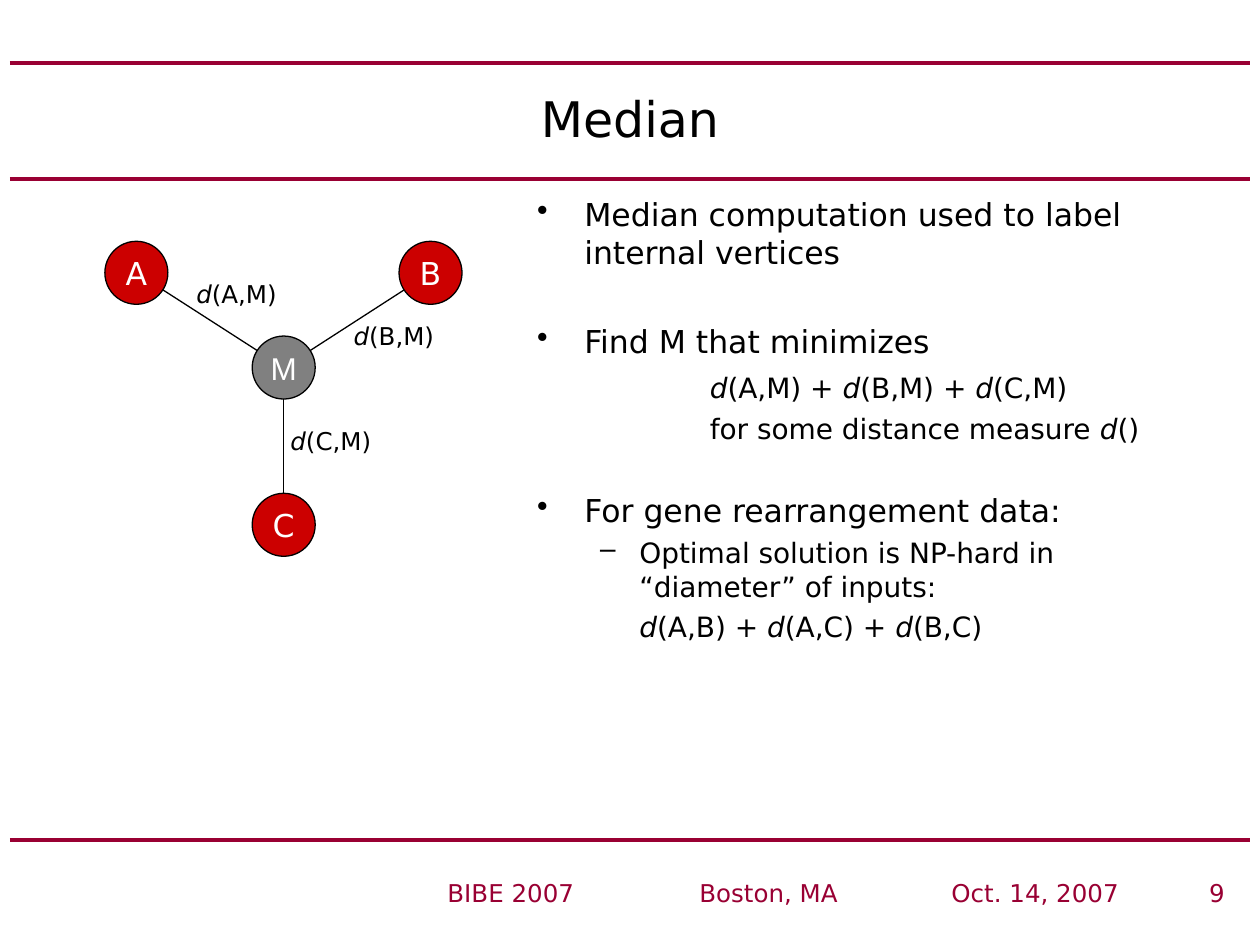
from dataclasses import dataclass
from typing import Any

from lxml.etree import SubElement
from pptx import Presentation
from pptx.dml.color import RGBColor
from pptx.enum.shapes import MSO_CONNECTOR as Connector, MSO_SHAPE as Shape
from pptx.enum.text import MSO_ANCHOR as Anchor, PP_ALIGN as Align
from pptx.oxml.ns import qn
from pptx.util import Cm, Pt

COLORS = {"rule": "990033", "text": "000000", "leaf": "CC0000",
          "median": "808080", "node_text": "FFFFFF"}
FONT = "DejaVu Sans"
NODE_SIZE = 1.27


@dataclass(frozen=True)
class Node:
    name: str
    x: float
    y: float
    fill: str = "leaf"
    font: str = FONT


@dataclass(frozen=True)
class Label:
    text: str
    x: float
    y: float


@dataclass(frozen=True)
class Item:
    text: str
    size: int = 18
    before: float = 4
    left: float = 0.95
    hanging: float = 0.95
    bullet: str = ""


MEDIAN = Node("M", 5.72, 7.41, "median", "Arial")
LEAVES = [Node("A", 2.75, 5.5), Node("B", 8.68, 5.5), Node("C", 5.72, 10.58)]
LABELS = [Label("*d*(A,M)", 2.97, 5.5), Label("*d*(B,M)", 6.14, 6.35),
          Label("*d*(C,M)", 4.87, 8.47)]
RULES = [1.27, 3.6, 16.93]
FOOTER_TABS = [(5.08, "l"), (10.16, "l"), (15.67, "r")]
ITEMS = [
    Item("Median computation used to label internal vertices", before=0, bullet="•"),
    Item("Find M that minimizes", before=29.5, bullet="•"),
    Item("*d*(A,M) + *d*(B,M) + *d*(C,M)", 16, 6, 3.48, 0),
    Item("for some distance measure *d*()", 16, 4.2, 3.48, 0),
    Item("For gene rearrangement data:", before=26, bullet="•"),
    Item("Optimal solution is NP-hard in “diameter” of inputs:", 16, 4, 2.06, 0.79, "–"),
    Item("*d*(A,B) + *d*(A,C) + *d*(B,C)", 16, 4, 2.06, 0),
]


def apply(target: Any, values: dict[str, Any]) -> None:
    for name, value in values.items():
        setattr(target, name, value)


def color(name: str) -> RGBColor:
    return RGBColor.from_string(COLORS[name])


def write(paragraph: Any, text: str, size: int, ink: str = "text", font: str = FONT) -> None:
    for index, part in enumerate(text.split("*")):
        if part:
            run = paragraph.add_run()
            run.text = part
            apply(run.font, {"name": font, "size": Pt(size), "italic": index % 2 == 1})
            run.font.color.rgb = color(ink)


def add_box(slide: Any, x: float, y: float, width: float, height: float) -> Any:
    frame = slide.shapes.add_textbox(Cm(x), Cm(y), Cm(width), Cm(height)).text_frame
    frame.word_wrap = True
    return frame


def add_line(slide: Any, start: tuple[float, float], end: tuple[float, float],
             ink: str, width: float) -> None:
    line = slide.shapes.add_connector(
        Connector.STRAIGHT, *(Cm(value) for value in (*start, *end)))
    line.line.color.rgb = color(ink)
    line.line.width = Pt(width)
    SubElement(line._element.spPr, qn("a:effectLst"))


def add_node(slide: Any, node: Node) -> None:
    shape = slide.shapes.add_shape(
        Shape.OVAL, Cm(node.x - NODE_SIZE / 2), Cm(node.y - NODE_SIZE / 2),
        Cm(NODE_SIZE), Cm(NODE_SIZE))
    shape.shadow.inherit = False
    shape.fill.solid()
    shape.fill.fore_color.rgb = color(node.fill)
    shape.line.color.rgb = color("text")
    shape.line.width = Pt(0.75)
    frame = shape.text_frame
    apply(frame, {"margin_left": 0, "margin_right": 0, "margin_top": 0, "margin_bottom": 0,
                  "vertical_anchor": Anchor.MIDDLE, "word_wrap": False})
    frame.paragraphs[0].alignment = Align.CENTER
    write(frame.paragraphs[0], node.name, 18, "node_text", node.font)


def add_label(slide: Any, label: Label) -> None:
    paragraph = add_box(slide, label.x, label.y, 3.6, 0.85).paragraphs[0]
    paragraph.alignment = Align.CENTER
    write(paragraph, label.text, 14)


def add_title(slide: Any, text: str) -> None:
    frame = add_box(slide, 1.27, 1.27, 22.86, 2.2)
    frame.vertical_anchor = Anchor.MIDDLE
    frame.paragraphs[0].alignment = Align.CENTER
    write(frame.paragraphs[0], text, 28)


def add_items(slide: Any, items: list[Item]) -> None:
    frame = add_box(slide, 10.58, 3.81, 13.55, 12.91)
    for index, item in enumerate(items):
        paragraph = frame.add_paragraph() if index else frame.paragraphs[0]
        properties = paragraph._p.get_or_add_pPr()
        properties.set("marL", str(Cm(item.left)))
        properties.set("indent", str(-Cm(item.hanging)))
        if item.bullet:
            SubElement(properties, qn("a:buChar"), char=item.bullet)
        else:
            SubElement(properties, qn("a:buNone"))
        paragraph.space_before = Pt(item.before)
        write(paragraph, item.text, item.size)


def add_footer(slide: Any, parts: list[str]) -> None:
    frame = add_box(slide, 7.2, 17.57, 17.78, 0.85)
    frame.margin_left = Cm(1.82)
    paragraph = frame.paragraphs[0]
    tabs = SubElement(paragraph._p.get_or_add_pPr(), qn("a:tabLst"))
    for position, alignment in FOOTER_TABS:
        SubElement(tabs, qn("a:tab"), pos=str(Cm(position)), algn=alignment)
    write(paragraph, "\t".join(parts), 14, "rule")


def main() -> None:
    presentation = Presentation()
    apply(presentation, {"slide_width": Cm(25.4), "slide_height": Cm(19.05)})
    slide = presentation.slides.add_slide(presentation.slide_layouts[6])
    for y in RULES:
        add_line(slide, (0.2, y), (25.2, y), "rule", 2.25)
    add_footer(slide, ["BIBE 2007", "Boston, MA", "Oct. 14, 2007", "9"])
    add_title(slide, "Median")
    for leaf in LEAVES:
        add_line(slide, (leaf.x, leaf.y), (MEDIAN.x, MEDIAN.y), "text", 0.75)
    for node in [*LEAVES, MEDIAN]:
        add_node(slide, node)
    for label in LABELS:
        add_label(slide, label)
    add_items(slide, ITEMS)
    presentation.save("out.pptx")


if __name__ == "__main__":
    main()
